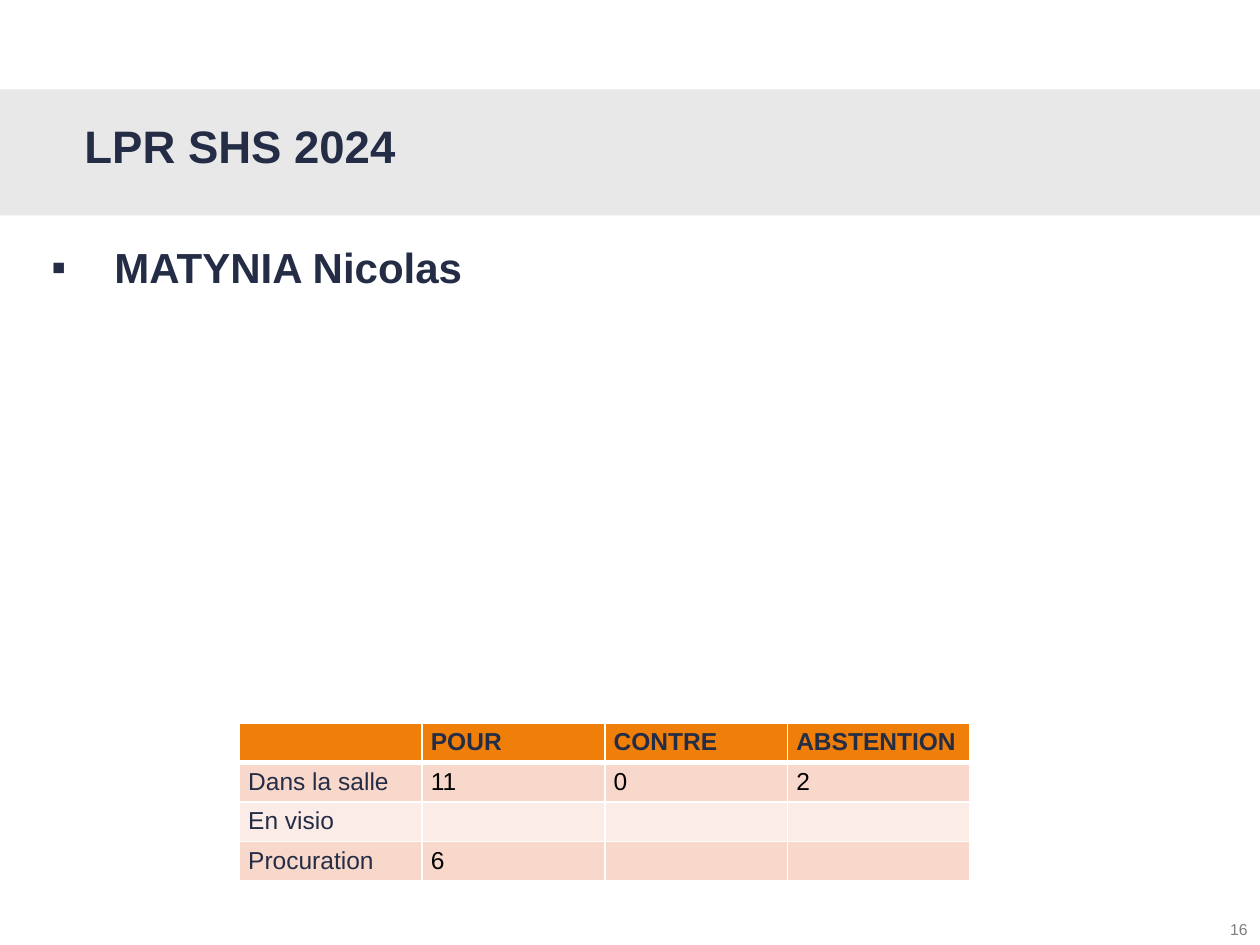
"""Build the voting result slide with its title, candidate and vote table."""
from dataclasses import dataclass

from lxml import etree
from pptx import Presentation
from pptx.dml.color import RGBColor
from pptx.enum.shapes import MSO_SHAPE
from pptx.enum.text import MSO_ANCHOR, PP_ALIGN
from pptx.oxml.ns import qn
from pptx.util import Inches, Pt

RECTANGLE = MSO_SHAPE.RECTANGLE
TOP = MSO_ANCHOR.TOP
LEFT, RIGHT = PP_ALIGN.LEFT, PP_ALIGN.RIGHT
TITLE_ONLY = 5
FONT = "Arial"
NAVY, BLACK, WHITE, GREY = "242D45", "000000", "FFFFFF", "7F7F7F"
ORANGE, PINK, PALE_PINK = "F07F09", "F9D8CC", "FCECE7"


@dataclass(frozen=True)
class TextStyle:
    size: float
    color: str = NAVY
    bold: bool = False


@dataclass(frozen=True)
class VoteRow:
    texts: tuple[str, str, str, str]
    fill: str
    header: bool = False


TITLE_STYLE = TextStyle(26, bold=True)
CANDIDATE_STYLE = TextStyle(24, bold=True)
NUMBER_STYLE = TextStyle(9, GREY)
HEADER_STYLE = TextStyle(14, bold=True)
LABEL_STYLE = TextStyle(14)
COUNT_STYLE = TextStyle(14, BLACK)

VOTES = (
    VoteRow(("", "POUR", "CONTRE", "ABSTENTION"), ORANGE, header=True),
    VoteRow(("Dans la salle", "11", "0", "2"), PINK),
    VoteRow(("En visio", "", "", ""), PALE_PINK),
    VoteRow(("Procuration", "6", "", ""), PINK),
)


def rgb(value: str) -> RGBColor:
    return RGBColor.from_string(value)


def place(shape, left: float, top: float, width: float, height: float) -> None:
    shape.left, shape.top = Inches(left), Inches(top)
    shape.width, shape.height = Inches(width), Inches(height)


def set_margins(target, horizontal: float, top: float, bottom: float) -> None:
    target.margin_left = target.margin_right = Inches(horizontal)
    target.margin_top, target.margin_bottom = Inches(top), Inches(bottom)


def add_run(paragraph, text: str, style: TextStyle) -> None:
    run = paragraph.add_run()
    run.text = text
    run.font.name = FONT
    run.font.size = Pt(style.size)
    run.font.bold = style.bold
    run.font.color.rgb = rgb(style.color)


def add_band(slide) -> None:
    band = slide.shapes.add_shape(
        RECTANGLE, Inches(0), Inches(0.71), Inches(10), Inches(1)
    )
    band.shadow.inherit = False
    band.fill.solid()
    band.fill.fore_color.rgb = rgb("D9D9D9")
    color = band.fill._xPr.find(qn("a:solidFill"))[0]
    etree.SubElement(color, qn("a:alpha"), val="59000")
    band.line.fill.background()
    slide.shapes._spTree.remove(band._element)
    slide.shapes._spTree.insert(2, band._element)


def format_title(slide) -> None:
    title = slide.shapes.title
    place(title, 0.57, 0.85, 9.12, 0.78)
    frame = title.text_frame
    frame.word_wrap = True
    frame.vertical_anchor = TOP
    set_margins(frame, 0.1, 0.09, 0.05)
    paragraph = frame.paragraphs[0]
    paragraph.alignment = LEFT
    add_run(paragraph, "LPR SHS 2024", TITLE_STYLE)


def add_candidate(slide, name: str) -> None:
    box = slide.shapes.add_textbox(
        Inches(0.31), Inches(1.83), Inches(9.38), Inches(1.18)
    )
    frame = box.text_frame
    frame.word_wrap = True
    set_margins(frame, 0.1, 0.09, 0.05)
    paragraph = frame.paragraphs[0]
    properties = paragraph._p.get_or_add_pPr()
    properties.set("marL", str(Inches(0.5)))
    properties.set("indent", str(-Inches(0.5)))
    etree.SubElement(properties, qn("a:buFont"), typeface=FONT)
    etree.SubElement(properties, qn("a:buChar"), char="▪")
    add_run(paragraph, name, CANDIDATE_STYLE)


def add_slide_number(slide, number: str) -> None:
    box = slide.shapes.add_textbox(
        Inches(9.64), Inches(7.25), Inches(0.36), Inches(0.25)
    )
    box.text_frame.word_wrap = False
    paragraph = box.text_frame.paragraphs[0]
    paragraph.alignment = RIGHT
    add_run(paragraph, number, NUMBER_STYLE)


def set_borders(cell, bottom: float, top: float) -> None:
    properties = cell._tc.get_or_add_tcPr()
    widths = {"a:lnL": 1, "a:lnR": 1, "a:lnT": top, "a:lnB": bottom}
    for position, (tag, width) in enumerate(widths.items()):
        line = etree.Element(qn(tag), w=str(Pt(width)))
        fill = etree.SubElement(line, qn("a:solidFill"))
        etree.SubElement(fill, qn("a:srgbClr"), val=WHITE)
        properties.insert(position, line)


def fill_cell(cell, text: str, style: TextStyle, fill: str) -> None:
    set_margins(cell, 0.07, 0.04, 0.04)
    cell.fill.solid()
    cell.fill.fore_color.rgb = rgb(fill)
    paragraph = cell.text_frame.paragraphs[0]
    if text:
        add_run(paragraph, text, style)
    else:
        etree.SubElement(paragraph._p, qn("a:endParaRPr"), sz=str(int(style.size * 100)))


def add_vote_table(slide, rows: tuple[VoteRow, ...]) -> None:
    column_count = len(rows[0].texts)
    table = slide.shapes.add_table(
        len(rows), column_count, Inches(1.9), Inches(5.74), Inches(5.8), Inches(1.2)
    ).table
    for column in table.columns:
        column.width = Inches(1.45)
    for row_index, row in enumerate(rows):
        table.rows[row_index].height = Inches(0.3)
        for column_index, text in enumerate(row.texts):
            style = LABEL_STYLE if column_index == 0 else COUNT_STYLE
            if row.header:
                style = HEADER_STYLE
            cell = table.cell(row_index, column_index)
            fill_cell(cell, text, style, row.fill)
            set_borders(
                cell, bottom=3 if row.header else 1, top=3 if row_index == 1 else 1
            )


def main() -> None:
    presentation = Presentation()
    presentation.slide_width = Inches(10)
    presentation.slide_height = Inches(7.5)
    slide = presentation.slides.add_slide(presentation.slide_layouts[TITLE_ONLY])
    add_band(slide)
    add_slide_number(slide, "16")
    format_title(slide)
    add_candidate(slide, "MATYNIA Nicolas")
    add_vote_table(slide, VOTES)
    presentation.save("out.pptx")


if __name__ == "__main__":
    main()
